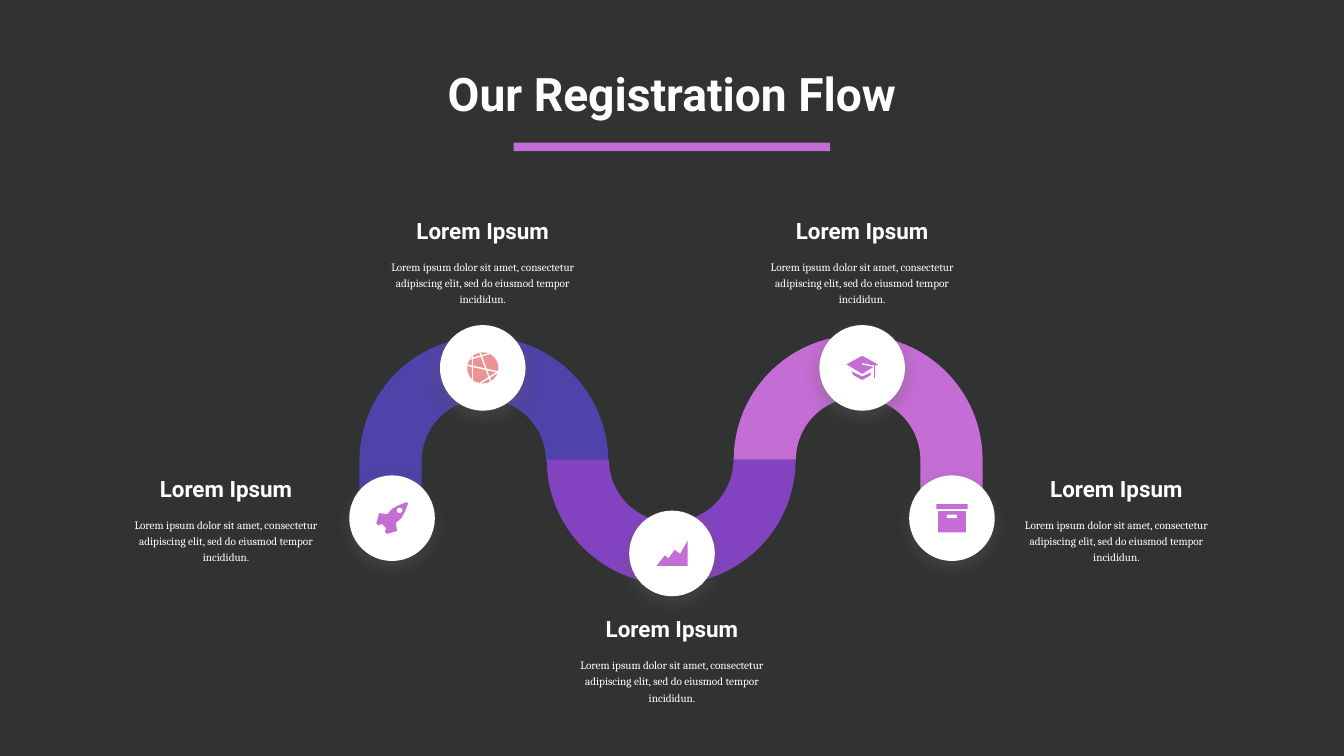
"""Builds the registration flow slide: a winding ribbon with five labelled steps."""
from math import cos, pi, radians, sin, sqrt

from lxml.etree import SubElement
from pptx import Presentation
from pptx.dml.color import RGBColor
from pptx.enum.shapes import MSO_CONNECTOR as Link, MSO_SHAPE as Preset
from pptx.enum.text import MSO_ANCHOR as Anchor, PP_ALIGN as Align
from pptx.oxml.ns import qn
from pptx.util import Inches, Pt

WIDTH, HEIGHT = Inches(26.67), Inches(15)
CELL = WIDTH / 100
ICON_CELL = Inches(0.01)

CHARCOAL = RGBColor(0x31, 0x32, 0x32)
WHITE = RGBColor(0xFF, 0xFF, 0xFF)
ORCHID = RGBColor(0xC4, 0x6D, 0xD4)
INDIGO = RGBColor(0x4F, 0x42, 0xA8)
VIOLET = RGBColor(0x83, 0x43, 0xC1)
CORAL = RGBColor(0xEA, 0x94, 0x94)
GLOW = RGBColor(0x5E, 0x5E, 0x5E)

OUTER, INNER = 9.26, 4.63
LEG, LEG_TIP = 3.4, 5.55
BADGE = 6.37
STEP_TITLE = "Lorem Ipsum"
STEP_TEXT = ("Lorem ipsum dolor sit amet, consectetur adipiscing elit, "
             "sed do eiusmod tempor incididun.")


def paint(shape, colour):
    shape.fill.solid()
    shape.fill.fore_color.rgb = colour
    shape.line.fill.background()
    shape.shadow.inherit = False


def grid_box(centre, top, width, height):
    return [round(n * CELL) for n in (centre - width / 2, top, width, height)]


def add_block(slide, preset, box, colour):
    block = slide.shapes.add_shape(preset, *box)
    paint(block, colour)
    return block


def add_outline(slide, points, colour):
    start, *rest = [(round(x), round(y)) for x, y in points]
    builder = slide.shapes.build_freeform(*start)
    builder.add_line_segments(rest, close=True)
    paint(builder.convert_to_shape(), colour)


def add_bend(slide, centre, across, down, colour, leg=False):
    """Draw a quarter ring towards the given signs, with a pointed leg if asked."""
    angles = [step * pi / 48 for step in range(25)]
    points = [(OUTER * sin(a), OUTER * cos(a)) for a in angles]
    if leg:
        points += [(OUTER, -LEG), ((OUTER + INNER) / 2, -LEG_TIP), (INNER, -LEG)]
    points += [(INNER * sin(a), INNER * cos(a)) for a in reversed(angles)]
    x, y = centre
    add_outline(slide, [((x + across * dx) * CELL, (y + down * dy) * CELL)
                        for dx, dy in points], colour)


def icon_point(badge, x, y):
    return tuple(round(c * CELL + n * ICON_CELL) for c, n in zip(badge, (x, y)))


def add_icon_part(slide, badge, points, colour):
    add_outline(slide, [icon_point(badge, x, y) for x, y in points], colour)


def add_icon_block(slide, badge, preset, middle, top, width, height, colour):
    corner = icon_point(badge, middle - width / 2, top)
    size = [round(n * ICON_CELL) for n in (width, height)]
    add_block(slide, preset, (*corner, *size), colour)


def add_icon_stroke(slide, badge, start, end, colour):
    stroke = slide.shapes.add_connector(
        Link.STRAIGHT, *icon_point(badge, *start), *icon_point(badge, *end))
    stroke.line.color.rgb, stroke.line.width = colour, Pt(2)
    SubElement(stroke.element.spPr, qn("a:effectLst"))


def draw_rocket(slide, badge):
    """Mirror half a profile about the rocket's diagonal axis."""
    half = [(43, 2), (27, 9), (13, 13), (-1, 12), (-11, 25), (-29, 15), (-29, 9), (-22, 6)]
    profile = half + [(along, -across) for along, across in reversed(half)]
    add_icon_part(slide, badge, [((a + b) / sqrt(2), (b - a) / sqrt(2))
                                 for a, b in profile], ORCHID)
    add_icon_block(slide, badge, Preset.OVAL, 15, -21, 11, 11, WHITE)


def draw_globe(slide, badge):
    radius = 31
    add_icon_block(slide, badge, Preset.OVAL, 0, -radius, 2 * radius, 2 * radius, CORAL)
    for chord in ((100, 15), (190, 15), (260, 60), (215, 295), (130, 230)):
        ends = [(radius * cos(radians(a)), radius * sin(radians(a))) for a in chord]
        add_icon_stroke(slide, badge, *ends, WHITE)


def draw_growth(slide, badge):
    add_icon_part(slide, badge, [(31, -25), (16, 1), (5, -7), (-7, 10), (-14, 4),
                                 (-31, 25), (31, 25)], ORCHID)


def draw_cap(slide, badge):
    add_icon_part(slide, badge, [(-21, 7), (0, 17), (18, 9), (16, 15), (0, 24),
                                 (-18, 14)], ORCHID)
    add_icon_part(slide, badge, [(0, -24), (31, -7), (0, 12), (-31, -7)], ORCHID)
    knot = (25, -3)
    add_icon_stroke(slide, badge, (0, -8), knot, WHITE)
    add_icon_stroke(slide, badge, knot, (25, 20), ORCHID)


def draw_archive(slide, badge):
    for top, width, height, colour in ((-28, 62, 10, ORCHID), (-14, 55, 42, ORCHID),
                                       (-7, 20, 7, WHITE)):
        add_icon_block(slide, badge, Preset.RECTANGLE, 0, top, width, height, colour)


def add_badge(slide, centre):
    x, y = centre
    badge = add_block(slide, Preset.OVAL, grid_box(x, y - BADGE / 2, BADGE, BADGE), WHITE)
    effects = badge.element.spPr.find(qn("a:effectLst"))
    shadow = SubElement(effects, qn("a:outerShdw"), blurRad=str(Pt(25)),
                        dist=str(Pt(10.1)), dir="5400000", rotWithShape="0")
    tint = SubElement(shadow, qn("a:srgbClr"), val=str(GLOW))
    SubElement(tint, qn("a:alpha"), val="40000")


def add_text(slide, text, box, font, size, bold=False, spacing=1.2, anchor=Anchor.TOP):
    frame = slide.shapes.add_textbox(*box).text_frame
    frame.word_wrap, frame.vertical_anchor = True, anchor
    frame.margin_left = frame.margin_right = Inches(0.03)
    frame.margin_top = frame.margin_bottom = Inches(0.03)
    paragraph = frame.paragraphs[0]
    paragraph.text, paragraph.alignment = text, Align.CENTER
    paragraph.line_spacing = spacing
    paragraph.font.name, paragraph.font.size = font, Pt(size)
    paragraph.font.bold, paragraph.font.color.rgb = bold, WHITE


def add_step(slide, badge, draw_icon, label):
    add_badge(slide, badge)
    draw_icon(slide, badge)
    centre, top = label
    add_text(slide, STEP_TITLE, grid_box(centre, top, 10.61, 2.51), "Roboto", 32, bold=True)
    add_text(slide, STEP_TEXT, grid_box(centre, top + 3.43, 14.06, 4.05), "Cambria", 16)


def main():
    deck = Presentation()
    deck.slide_width, deck.slide_height = WIDTH, HEIGHT
    slide = deck.slides.add_slide(deck.slide_layouts[6])
    slide.background.fill.solid()
    slide.background.fill.fore_color.rgb = CHARCOAL

    add_block(slide, Preset.RECTANGLE, grid_box(50, 10.61, 23.55, 0.64), ORCHID)
    add_text(slide, "Our Registration Flow", grid_box(50, 4.61, 35.02, 4.57), "Roboto", 66,
             bold=True, spacing=1, anchor=Anchor.MIDDLE)

    first_arch, valley, last_arch = (36, 34.31), (49.94, 34.2), (63.85, 34.2)
    for centre, down, colour, leg_side in ((first_arch, -1, INDIGO, -1),
                                           (valley, 1, VIOLET, 0),
                                           (last_arch, -1, ORCHID, 1)):
        for across in (-1, 1):
            add_bend(slide, centre, across, down, colour, leg=across == leg_side)

    end_row, arch_row = 38.55, 27.37
    end_label, arch_label = 34.8, 15.64
    for badge, draw_icon, label in (
            ((29.17, end_row), draw_rocket, (16.82, end_label)),
            ((35.92, arch_row), draw_globe, (35.92, arch_label)),
            ((50, 41.17), draw_growth, (50, 45.26)),
            ((64.15, arch_row), draw_cap, (64.15, arch_label)),
            ((70.83, end_row), draw_archive, (83.07, end_label))):
        add_step(slide, badge, draw_icon, label)
    deck.save("out.pptx")


if __name__ == "__main__":
    main()
